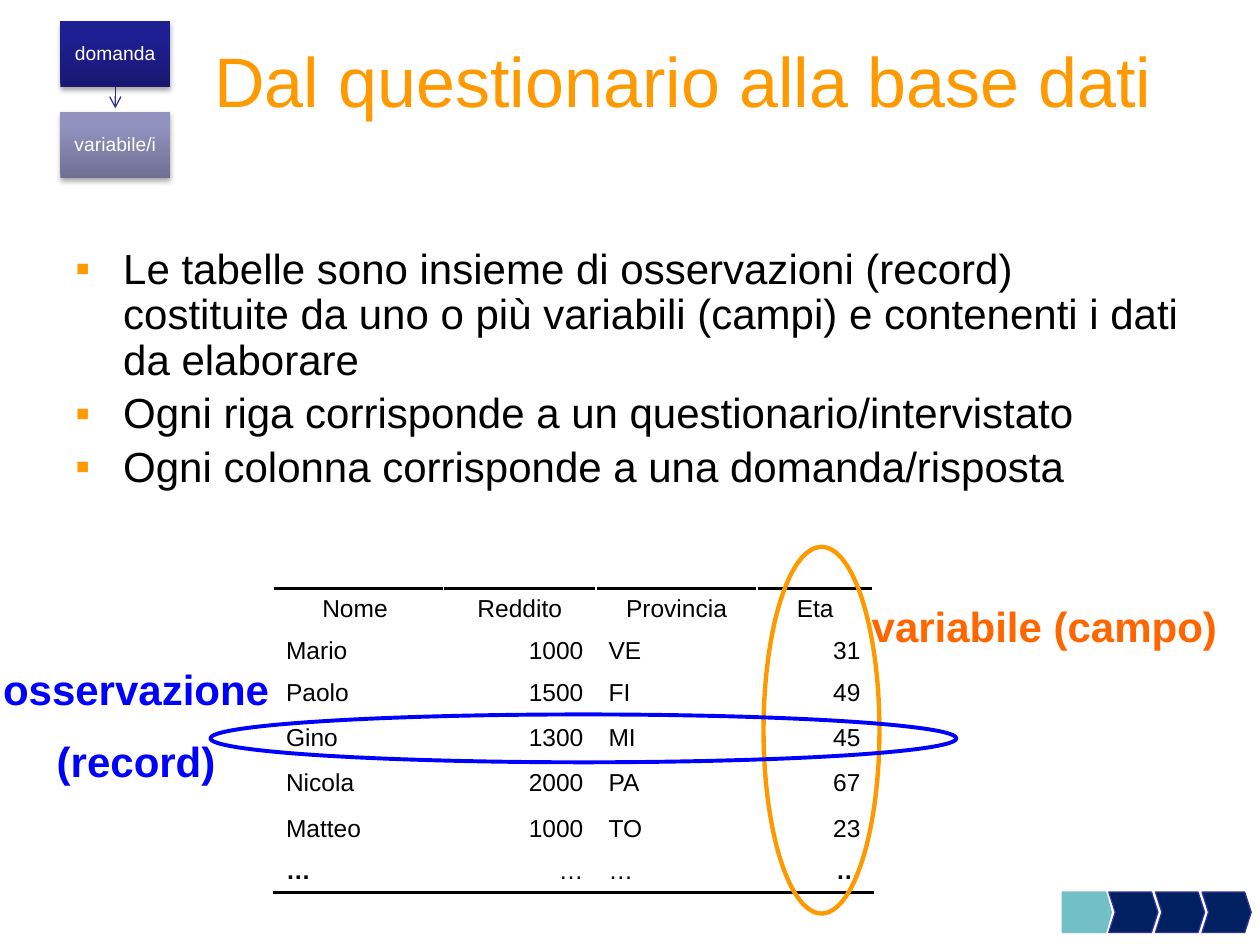
"""Slide on how a questionnaire becomes a data table."""
from pptx import Presentation
from pptx.dml.color import RGBColor
from pptx.enum.shapes import MSO_CONNECTOR, MSO_SHAPE
from pptx.enum.text import MSO_ANCHOR, PP_ALIGN
from pptx.oxml import parse_xml
from pptx.oxml.ns import nsdecls, qn
from pptx.util import Inches, Pt

W, H = 10, 7.5
FONT = "Arial"
ORANGE, BLUE, NAVY = "FF9900", "0000FF", "002060"
LEFT, CENTER, RIGHT = PP_ALIGN.LEFT, PP_ALIGN.CENTER, PP_ALIGN.RIGHT

TITLE = "Dal questionario alla base dati"
BULLETS = [
    "Le tabelle sono insieme di osservazioni (record) costituite da uno o più "
    "variabili (campi) e contenenti i dati da elaborare",
    "Ogni riga corrisponde a un questionario/intervistato",
    "Ogni colonna corrisponde a una domanda/risposta",
]
STEPS = [
    ("domanda", [(0, "181872"), (80, "1F1F94"), (100, "1D1D97")]),
    ("variabile/i", [(0, "707093"), (80, "9292BF"), (100, "9191C0")]),
]
ROWS = [
    ("Nome ", "Reddito", "Provincia", "Eta"),
    ("Mario", "1000", "VE", "31"),
    ("Paolo", "1500", "FI", "49"),
    ("Gino", "1300", "MI", "45"),
    ("Nicola", "2000", "PA", "67"),
    ("Matteo", "1000", "TO", "23"),
    ("…", "…", "…", "…"),
]
COL_WIDTHS = [1.35, 1.21, 1.28, 0.92]
ROW_HEIGHTS = [0.33, 0.33, 0.36, 0.36, 0.36, 0.33, 0.33]
COL_ALIGN = [LEFT, RIGHT, LEFT, RIGHT]
LABELS = [
    (["variabile (campo)"], (6.82, 4.72, 2.97, 0.51), "FF6600", LEFT, False),
    (["osservazione", "(record)"], (-0.33, 5.22, 2.82, 1.11), BLUE, CENTER, True),
]
RINGS = [
    ((6.06, 4.34, 0.92, 2.91), ORANGE, 2.5),
    ((1.67, 5.67, 5.92, 0.38), BLUE, 2.25),
]
PROGRESS = [
    (MSO_SHAPE.PENTAGON, 0.138, "72BFC5", "72BFC5"),
    *[(MSO_SHAPE.CHEVRON, 0.16, NAVY, "333399")] * 3,
]


def rgb(value):
    """Turn a hex string into a colour."""
    return RGBColor.from_string(value)


def inches(box):
    """Convert a box in inches to lengths."""
    return [Inches(v) for v in box]


def write(p, text, size, color, align=LEFT, bold=False, before=0):
    """Add one formatted run to a paragraph."""
    p.alignment = align
    p.space_before = Pt(size * before)
    r = p.add_run()
    r.text = text
    r.font.name, r.font.size, r.font.bold = FONT, Pt(size), bold
    r.font.color.rgb = rgb(color)


def text_box(s, box, lines, size, color, wrap=True, **style):
    """Add a text box with one paragraph per line."""
    tf = s.shapes.add_textbox(*inches(box)).text_frame
    tf.word_wrap = wrap
    for i, line in enumerate(lines):
        p = tf.add_paragraph() if i else tf.paragraphs[0]
        write(p, line, size, color, **style)
    return tf


def add_shape(s, kind, box, fill=None, line=None, width=0.75):
    """Add a preset shape without a shadow."""
    sp = s.shapes.add_shape(kind, *inches(box))
    sp.shadow.inherit = False
    if fill:
        sp.fill.solid()
        sp.fill.fore_color.rgb = rgb(fill)
    else:
        sp.fill.background()
    if line:
        sp.line.color.rgb = rgb(line)
        sp.line.width = Pt(width)
    else:
        sp.line.fill.background()
    return sp


def add_bullets(s):
    """Add the bulleted statements."""
    tf = text_box(s, (0.5, 1.92, 9, 5), BULLETS, 24, "000000", before=0.2)
    for p in tf.paragraphs:
        p.line_spacing = 0.9
        pPr = p._p.get_or_add_pPr()
        pPr.set("marL", str(Inches(0.38)))
        pPr.set("indent", str(-Inches(0.38)))
        for xml in (f'<a:buClr {nsdecls("a")}><a:srgbClr val="{ORANGE}"/></a:buClr>',
                    f'<a:buFont {nsdecls("a")} typeface="{FONT}"/>',
                    f'<a:buChar {nsdecls("a")} char="▪"/>'):
            pPr.append(parse_xml(xml))


def add_steps(s):
    """Add the two gradient boxes and the arrow between them."""
    x, y, w, h, pitch = 0.48, 0.17, 0.87, 0.52, 0.72
    mid = x + w / 2
    ln = s.shapes.add_connector(MSO_CONNECTOR.STRAIGHT,
                                *inches((mid, y + h, mid, y + pitch - 0.03)))
    ln.line.color.rgb = rgb("313192")
    ln.line.width = Pt(0.75)
    ln.line._get_or_add_ln().append(parse_xml(f'<a:tailEnd {nsdecls("a")} type="arrow"/>'))
    ln._element.spPr.append(parse_xml(f'<a:effectLst {nsdecls("a")}/>'))
    for i, (label, stops) in enumerate(STEPS):
        sp = add_shape(s, MSO_SHAPE.RECTANGLE, (x, y + i * pitch, w, h))
        sp.fill.gradient()
        sp.fill.gradient_angle = 90
        spPr = sp._element.spPr
        gs_list = spPr.find(qn("a:gradFill")).find(qn("a:gsLst"))
        gs_list[:] = [parse_xml(f'<a:gs {nsdecls("a")} pos="{pos * 1000}">'
                                f'<a:srgbClr val="{color}"/></a:gs>') for pos, color in stops]
        spPr.find(qn("a:effectLst")).append(parse_xml(
            f'<a:outerShdw {nsdecls("a")} blurRad="{Pt(3.1)}" dist="{Pt(1.8)}" dir="5400000" '
            'rotWithShape="0"><a:srgbClr val="000000"><a:alpha val="35000"/>'
            '</a:srgbClr></a:outerShdw>'))
        tf = sp.text_frame
        tf.word_wrap = True
        tf.vertical_anchor = MSO_ANCHOR.MIDDLE
        tf.margin_left = tf.margin_right = tf.margin_top = tf.margin_bottom = Inches(0.09)
        write(tf.paragraphs[0], label, 11, "FFFFFF", CENTER)
        tf.paragraphs[0].line_spacing = 0.9


def add_rule(cell, side):
    """Draw a black border on one side of a cell."""
    cell._tc.get_or_add_tcPr().insert(0, parse_xml(
        f'<a:{side} {nsdecls("a")} w="{Pt(2)}"><a:solidFill>'
        f'<a:srgbClr val="000000"/></a:solidFill></a:{side}>'))


def add_data_table(s):
    """Add the table of observations and variables."""
    box = (2.17, 4.67, sum(COL_WIDTHS), sum(ROW_HEIGHTS))
    table = s.shapes.add_table(len(ROWS), len(COL_WIDTHS), *inches(box)).table
    table.first_row = table.horz_banding = False
    for col, width in zip(table.columns, COL_WIDTHS):
        col.width = Inches(width)
    last = len(ROWS) - 1
    for i, values in enumerate(ROWS):
        table.rows[i].height = Inches(ROW_HEIGHTS[i])
        for j, value in enumerate(values):
            cell = table.cell(i, j)
            cell.fill.solid()
            cell.fill.fore_color.rgb = rgb("FFFFFF")
            write(cell.text_frame.paragraphs[0], value, 14, "000000",
                  COL_ALIGN[j] if i else CENTER, i == last and j in (0, 3), 0.2)
            if i in (0, last):
                add_rule(cell, "lnB" if i else "lnT")


def main():
    """Build and save the slide."""
    prs = Presentation()
    prs.slide_width, prs.slide_height = Inches(W), Inches(H)
    s = prs.slides.add_slide(prs.slide_layouts[6])
    add_bullets(s)
    tf = text_box(s, (0.92, 0.17, 9, 0.92), [TITLE], 40, ORANGE, align=CENTER)
    tf.vertical_anchor = MSO_ANCHOR.MIDDLE
    add_steps(s)
    add_data_table(s)
    for lines, box, color, align, wrap in LABELS:
        text_box(s, box, lines, 24, color, wrap, align=align, bold=True, before=0.5)
    for box, color, width in RINGS:
        add_shape(s, MSO_SHAPE.OVAL, box, line=color, width=width)
    for i, (kind, point, fill, line) in enumerate(PROGRESS):
        sp = add_shape(s, kind, (8.43 + i * 0.37, 7.08, 0.39, 0.32), fill, line)
        sp.adjustments[0] = point
    prs.save("out.pptx")


if __name__ == "__main__":
    main()
